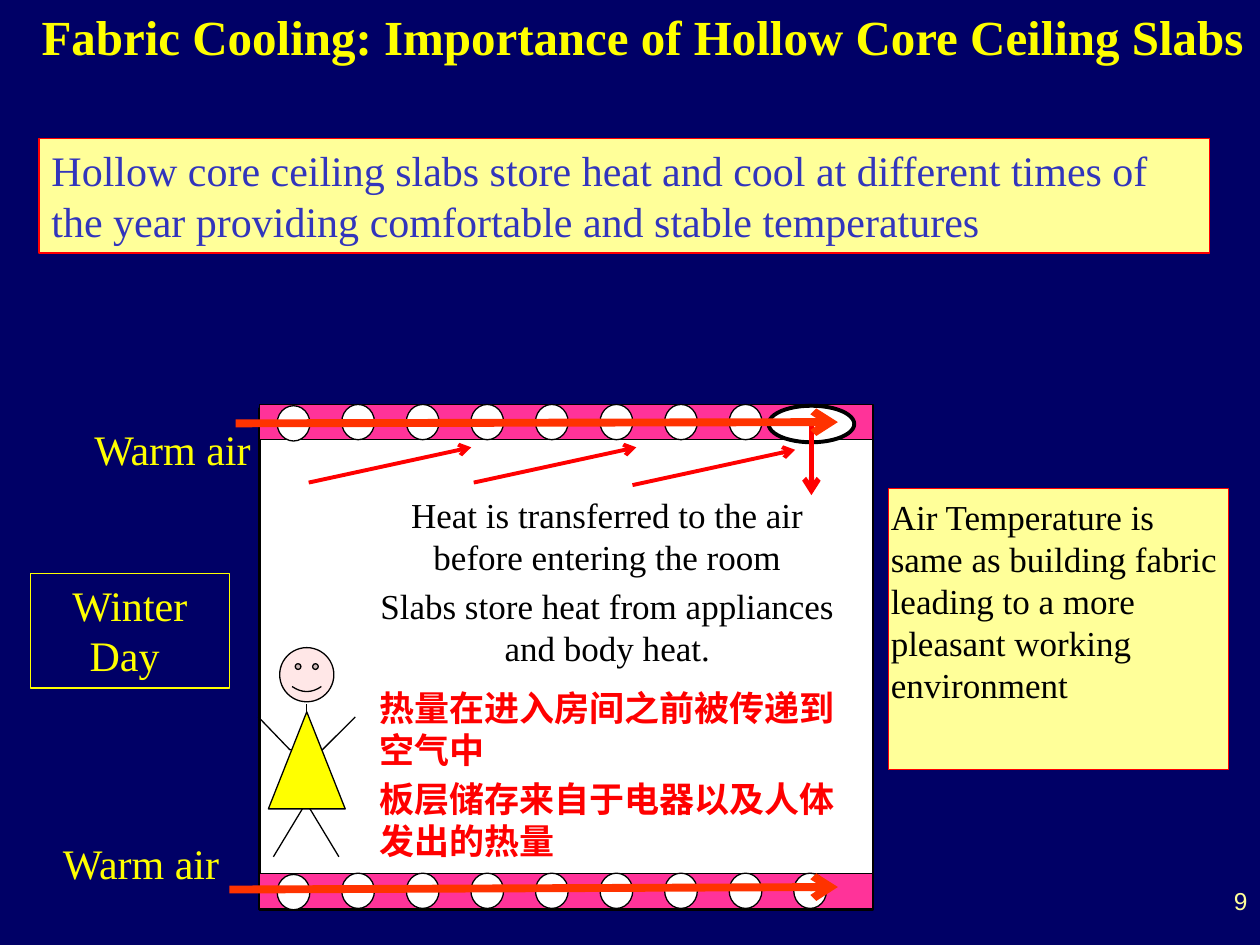
from lxml.etree import SubElement
from pptx import Presentation
from pptx.dml.color import RGBColor
from pptx.enum.shapes import MSO_CONNECTOR, MSO_SHAPE as SHAPE
from pptx.enum.text import MSO_ANCHOR, MSO_AUTO_SIZE, PP_ALIGN as ALIGN
from pptx.oxml.ns import qn
from pptx.util import Inches, Pt

rgb = RGBColor.from_string
SERIF, SANS = "Times New Roman", "Arial"
BLACK, WHITE, RED, YELLOW = "000000", "FFFFFF", "FF0000", "FFFF00"
CREAM, PINK, ORANGE = "FFFF99", "FF3399", "FF3300"


def add_outlined(kind, at, fill, width=0.75):
    shape = slide.shapes.add_shape(kind, *map(Inches, at))
    shape.shadow.inherit = False
    shape.fill.solid()
    shape.fill.fore_color.rgb = rgb(fill)
    shape.line.color.rgb = rgb(BLACK)
    shape.line.width = Pt(width)
    return shape


def add_stroke(start, end, color=BLACK, width=0.75, arrow=False):
    stroke = slide.shapes.add_connector(
        MSO_CONNECTOR.STRAIGHT, *map(Inches, start + end))
    stroke.line.color.rgb = rgb(color)
    stroke.line.width = Pt(width)
    if arrow:
        SubElement(stroke.line._get_or_add_ln(), qn("a:tailEnd"), type="arrow")
    SubElement(stroke._element.spPr, qn("a:effectLst"))


prs = Presentation()
prs.slide_width, prs.slide_height = Inches(10), Inches(7.5)
slide = prs.slides.add_slide(prs.slide_layouts[5])
slide.background.fill.solid()
slide.background.fill.fore_color.rgb = rgb("000066")

title = slide.shapes.title
title.left, title.top, title.width, title.height = map(Inches, (0.2, 0, 9.8, 0.57))
title.text_frame.text = "Fabric Cooling: Importance of Hollow Core Ceiling Slabs"
title.text_frame.auto_size = MSO_AUTO_SIZE.NONE
title.text_frame.vertical_anchor = MSO_ANCHOR.TOP
heading = title.text_frame.paragraphs[0]
heading.alignment = ALIGN.CENTER
heading_font = heading.runs[0].font
heading_font.name, heading_font.size, heading_font.bold = SERIF, Pt(28), True
heading_font.color.rgb = rgb(YELLOW)

add_outlined(SHAPE.RECTANGLE, (2.06, 3.24, 4.87, 3.98), WHITE, 1.5)
for slab_top in (3.21, 6.93):
    add_outlined(SHAPE.RECTANGLE, (2.06, slab_top, 4.87, 0.28), PINK)
    for core in range(9):
        core_top = slab_top + (0.01 if core == 0 else 0)
        add_outlined(SHAPE.OVAL, (2.2 + core * 0.5125, core_top, 0.26, 0.28), WHITE)

for heat_x, heat_y in ((2.45, 3.83), (3.76, 3.83), (5.02, 3.85)):
    add_stroke((heat_x, heat_y), (heat_x + 1.29, heat_y - 0.28), RED, 2.25, True)

for foot_x in (2.17, 2.69):
    add_stroke((2.43, 6.37), (foot_x, 6.8))
head = add_outlined(SHAPE.SMILEY_FACE, (2.22, 5.14, 0.43, 0.43), "FFE7E7")
head.adjustments[0] = 0.047
add_stroke((2.43, 5.77), (2.43, 5.59))
arms_path = slide.shapes.build_freeform(Inches(2.05), Inches(5.69))
arms_path.add_line_segments(
    [(Inches(x), Inches(y)) for x, y in ((2.3, 5.95), (2.56, 5.95), (2.82, 5.69))],
    close=False)
arms = arms_path.convert_to_shape()
arms.shadow.inherit = False
arms.fill.background()
arms.line.color.rgb = rgb(BLACK)
arms.line.width = Pt(0.75)
add_outlined(SHAPE.ISOSCELES_TRIANGLE, (2.13, 5.65, 0.61, 0.77), YELLOW)

room_notes = [
    ("Heat is transferred to the air before entering the room",
     ALIGN.CENTER, 20, SERIF, BLACK, False, 0),
    ("Slabs store heat from appliances and body heat.",
     ALIGN.CENTER, 20, SERIF, BLACK, False, 4),
    ("热量在进入房间之前被传递到空气中", ALIGN.LEFT, 20, SANS, RED, True, 10),
    ("板层储存来自于电器以及人体发出的热量", ALIGN.LEFT, 20, SANS, RED, True, 4),
]
summary = [("Hollow core ceiling slabs store heat and cool at different times of "
            "the year providing comfortable and stable temperatures",
            ALIGN.LEFT, 24, SERIF, "3235BC", False, 0)]
comfort = [("Air Temperature is same as building fabric leading to a more "
            "pleasant working environment", ALIGN.LEFT, 20, SERIF, BLACK, False, 0)]
season = [("Winter Day ", ALIGN.CENTER, 24, SERIF, YELLOW, False, 0)]
warm_air = [("Warm air", ALIGN.LEFT, 24, SERIF, YELLOW, False, 0)]
page_number = [("9", ALIGN.RIGHT, 14, SANS, CREAM, False, 0)]

notes = [
    ((0.31, 1.1, 9.29, 0.91), CREAM, (RED, 1), (0.1, 0.05), summary),
    ((2.99, 3.91, 3.66, 2.99), None, None, (0.02, 0.01), room_notes),
    ((0.24, 4.55, 1.58, 0.91), None, (YELLOW, 0.75), (0.1, 0.05), season),
    ((7.05, 3.88, 2.7, 2.23), CREAM, (RED, 0.75), (0.02, 0.05), comfort),
    ((0.4, 6.6, 1.49, 0.5), None, None, (0.1, 0.05), warm_air),
    ((0.65, 3.31, 1.49, 1), None, None, (0.1, 0.05), warm_air),
    ((7.67, 6.98, 2.33, 0.52), None, None, (0.1, 0.05), page_number),
]
for at, fill, border, (side, edge), paragraphs in notes:
    note = slide.shapes.add_textbox(*map(Inches, at))
    if fill:
        note.fill.solid()
        note.fill.fore_color.rgb = rgb(fill)
    if border:
        note.line.color.rgb = rgb(border[0])
        note.line.width = Pt(border[1])
    frame = note.text_frame
    frame.word_wrap = True
    frame.margin_left = frame.margin_right = Inches(side)
    frame.margin_top = frame.margin_bottom = Inches(edge)
    frame.text = "\n".join(entry[0] for entry in paragraphs)
    for paragraph, entry in zip(frame.paragraphs, paragraphs):
        wording, alignment, size, face, color, bold, before = entry
        paragraph.alignment = alignment
        paragraph.space_before = Pt(before)
        font = paragraph.runs[0].font
        font.name, font.size, font.bold = face, Pt(size), bold
        font.color.rgb = rgb(color)

add_outlined(SHAPE.OVAL, (6.1, 3.22, 0.68, 0.29), WHITE, 2.25)
add_stroke((6.44, 3.36), (6.44, 3.93), RED, 3, True)
add_stroke((1.87, 3.36), (6.65, 3.35), ORANGE, 4.5, True)
add_stroke((1.82, 7.06), (6.65, 7.04), ORANGE, 4.5, True)

prs.save("out.pptx")
